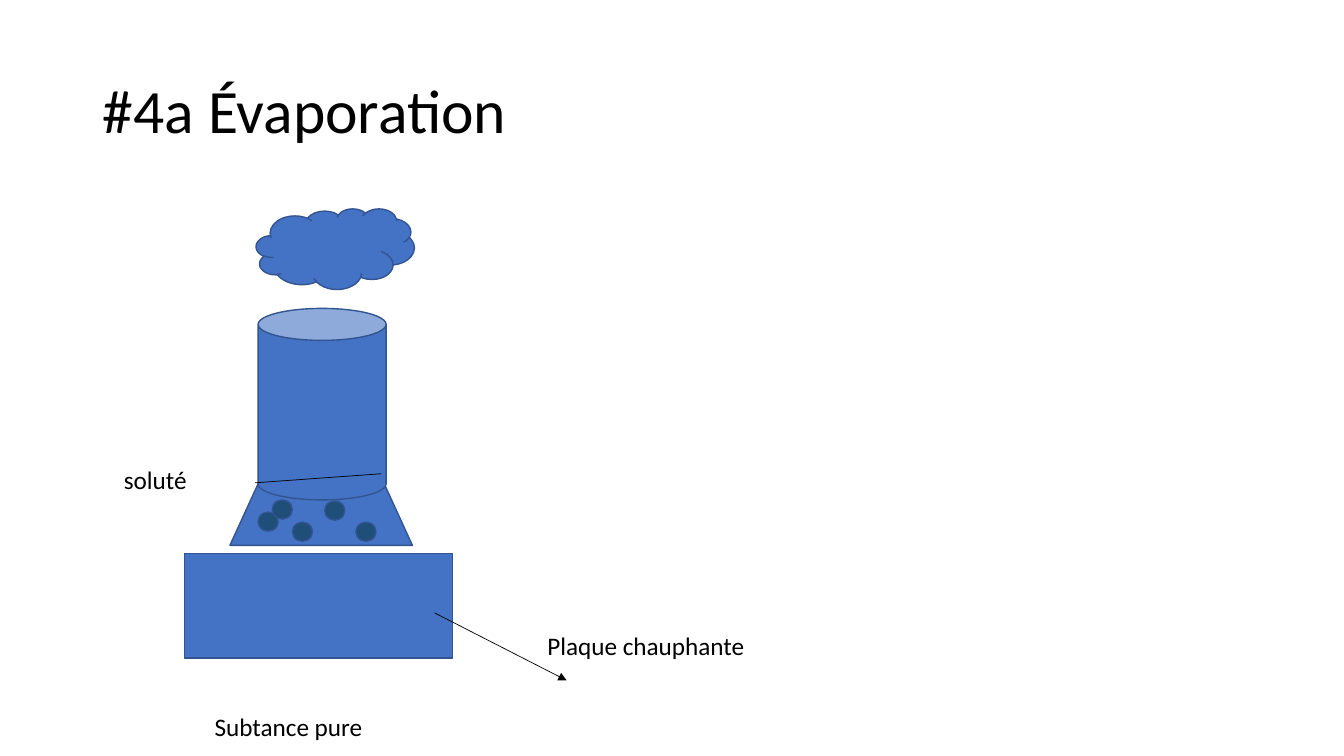
from lxml.etree import SubElement
from pptx import Presentation
from pptx.dml.color import RGBColor
from pptx.enum.shapes import MSO_CONNECTOR, MSO_SHAPE
from pptx.enum.text import MSO_ANCHOR, MSO_AUTO_SIZE
from pptx.oxml.ns import qn
from pptx.util import Pt

PX = 9144
BLUE = RGBColor(0x44, 0x72, 0xC4)
OUTLINE = RGBColor(0x32, 0x54, 0x91)
SOLUTE = RGBColor(0x1F, 0x4E, 0x79)
BLACK = RGBColor(0x00, 0x00, 0x00)


def px(*lengths):
    """Turn px lengths into EMU."""
    return [length * PX for length in lengths]


def set_format(target, values):
    """Set each attribute of the target from a dict of format values."""
    for name, value in values.items():
        setattr(target, name, value)


def add_figure(slide, kind, box, fill=BLUE, rotation=0):
    """Add a filled and outlined preset shape."""
    shape = slide.shapes.add_shape(kind, *px(*box))
    shape.shadow.inherit = False
    shape.rotation = rotation
    shape.fill.solid()
    shape.fill.fore_color.rgb = fill
    shape.line.color.rgb = OUTLINE
    shape.line.width = Pt(1)


def add_text(slide, text, box, size=18, frame_format=None, spacing=1.0):
    """Add a text box with one paragraph."""
    frame = slide.shapes.add_textbox(*px(*box)).text_frame
    set_format(frame, {"word_wrap": True, **(frame_format or {})})
    paragraph = frame.paragraphs[0]
    paragraph.line_spacing = spacing
    run = paragraph.add_run()
    run.text = text
    set_format(run.font, {"name": "Calibri", "size": Pt(size)})
    run.font.color.rgb = BLACK


def add_label(slide, text, left, top):
    """Add a caption that grows with its text."""
    add_text(slide, text, (left, top, 300, 40),
             frame_format={"auto_size": MSO_AUTO_SIZE.SHAPE_TO_FIT_TEXT})


def add_pointer(slide, ends, arrow=False):
    """Add a thin black line, with an arrowhead at its end if asked."""
    connector = slide.shapes.add_connector(MSO_CONNECTOR.STRAIGHT, *px(*ends))
    connector.line.color.rgb = BLACK
    connector.line.width = Pt(0.5)
    if arrow:
        SubElement(connector.line._get_or_add_ln(), qn("a:tailEnd"), type="triangle")
    SubElement(connector._element.spPr, qn("a:effectLst"))


def main():
    """Build the evaporation slide and save it."""
    presentation = Presentation()
    set_format(presentation, dict(zip(("slide_width", "slide_height"), px(1333, 750))))
    slide = presentation.slides.add_slide(presentation.slide_layouts[6])

    add_text(slide, "#4a Évaporation", (92, 40, 1150, 145), size=44,
             frame_format={"vertical_anchor": MSO_ANCHOR.MIDDLE}, spacing=0.9)

    add_figure(slide, MSO_SHAPE.FLOWCHART_MANUAL_OPERATION, (228, 462, 181, 79), rotation=180)
    add_figure(slide, MSO_SHAPE.CAN, (256, 306, 127, 190))
    add_figure(slide, MSO_SHAPE.CLOUD, (254, 207, 157, 80))
    add_label(slide, "soluté", 113, 456)

    add_figure(slide, MSO_SHAPE.RECTANGLE, (183, 549, 266, 104))
    add_pointer(slide, (431, 608, 562, 675), arrow=True)
    add_label(slide, "Plaque chauphante", 533, 620)
    add_label(slide, "Subtance pure", 203, 701)

    add_pointer(slide, (253, 479, 378, 470))
    for left, top in ((353, 518), (256, 508), (322, 497), (290, 518), (270, 496)):
        add_figure(slide, MSO_SHAPE.OVAL, (left, top, 20, 19), fill=SOLUTE)

    presentation.save("out.pptx")


if __name__ == "__main__":
    main()
